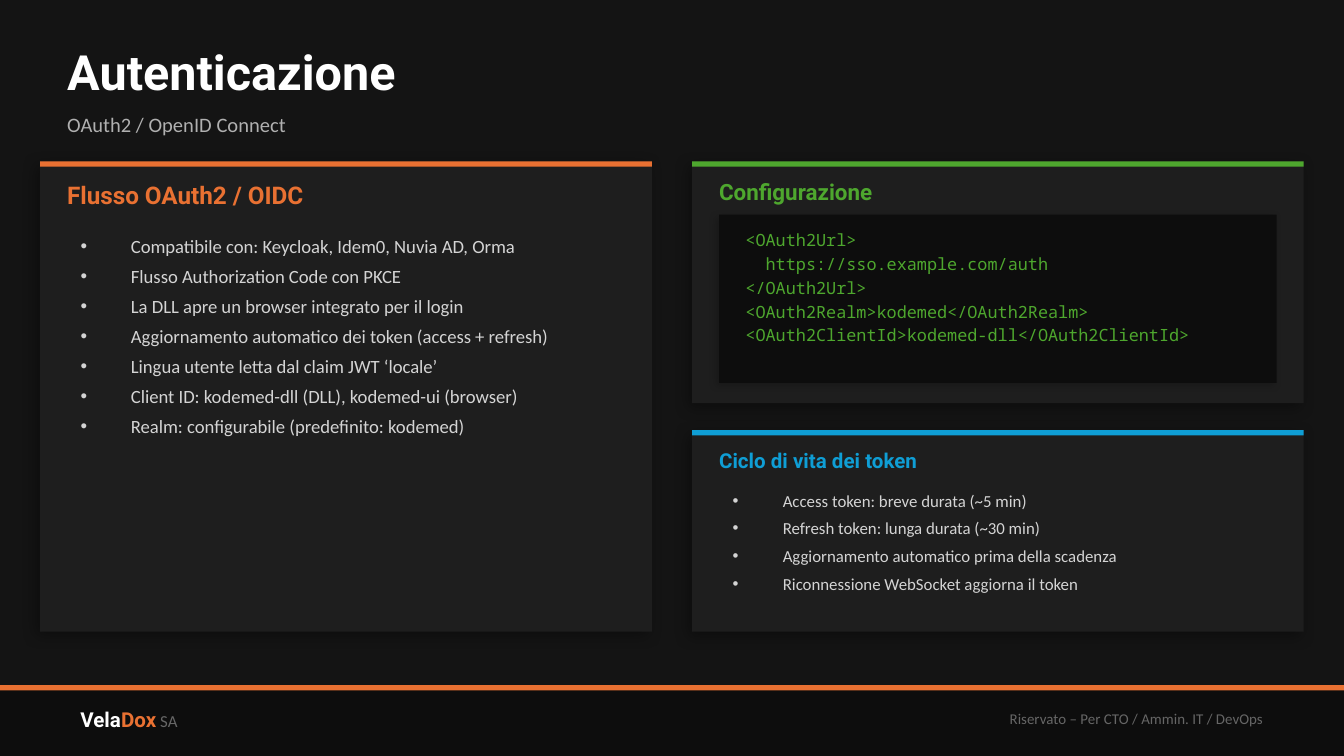
from lxml.etree import SubElement
from pptx import Presentation
from pptx.dml.color import RGBColor
from pptx.enum.shapes import MSO_SHAPE
from pptx.enum.text import MSO_ANCHOR, MSO_AUTO_SIZE, PP_ALIGN
from pptx.oxml.ns import qn
from pptx.util import Cm, Pt

BACKGROUND = RGBColor(0x14, 0x14, 0x14)
DARK = RGBColor(0x0D, 0x0D, 0x0D)
PANEL = RGBColor(0x1E, 0x1E, 0x1E)
ORANGE = RGBColor(0xE9, 0x71, 0x32)
GREEN = RGBColor(0x4E, 0xA7, 0x2E)
BLUE = RGBColor(0x0F, 0x9E, 0xD5)
WHITE = RGBColor(0xFF, 0xFF, 0xFF)
LIGHT = RGBColor(0xD4, 0xD4, 0xD4)
SILVER = RGBColor(0xB0, 0xB0, 0xB0)
GREY = RGBColor(0x66, 0x66, 0x66)
HEADING, BODY, MONO = "Roboto", "Calibri", "Noto Sans Mono"

TITLE = "Autenticazione"
SUBTITLE = "OAuth2 / OpenID Connect"
BRAND = [("Vela", HEADING, 11, WHITE, True), ("Dox", HEADING, 11, ORANGE, True),
         (" SA", BODY, 9, GREY, False)]
AUDIENCE = "Riservato – Per CTO / Ammin. IT / DevOps"
FLOW = [
    "Compatibile con: Keycloak, Idem0, Nuvia AD, Orma",
    "Flusso Authorization Code con PKCE",
    "La DLL apre un browser integrato per il login",
    "Aggiornamento automatico dei token (access + refresh)",
    "Lingua utente letta dal claim JWT ‘locale’",
    "Client ID: kodemed-dll (DLL), kodemed-ui (browser)",
    "Realm: configurabile (predefinito: kodemed)",
]
CONFIGURATION = [
    "<OAuth2Url>",
    "  https://sso.example.com/auth",
    "</OAuth2Url>",
    "<OAuth2Realm>kodemed</OAuth2Realm>",
    "<OAuth2ClientId>kodemed-dll</OAuth2ClientId>",
]
TOKENS = [
    "Access token: breve durata (~5 min)",
    "Refresh token: lunga durata (~30 min)",
    "Aggiornamento automatico prima della scadenza",
    "Riconnessione WebSocket aggiorna il token",
]

# All lengths below are centimetres.
SLIDE_WIDTH, SLIDE_HEIGHT = 25.4, 14.29
MARGIN, CARD_WIDTH, PADDING, BAR = 0.76, 11.56, 0.51, 0.1
LEFT, RIGHT = MARGIN, SLIDE_WIDTH - MARGIN - CARD_WIDTH
INNER_WIDTH = CARD_WIDTH - 2 * PADDING
CARD_TOP, CARD_BOTTOM, TOKENS_TOP = 3.05, 11.94, 8.13
CODE_TOP, CODE_HEIGHT = 4.06, 3.18
FOOTER_TOP = 12.95

# heading, colour, left, top, height, heading height, heading size
CARDS = [
    ("Flusso OAuth2 / OIDC", ORANGE, LEFT, CARD_TOP, CARD_BOTTOM - CARD_TOP, 0.76, 13),
    ("Configurazione", GREEN, RIGHT, CARD_TOP, 4.57, 0.64, 12),
    ("Ciclo di vita dei token", BLUE, RIGHT, TOKENS_TOP, CARD_BOTTOM - TOKENS_TOP, 0.64, 11),
]
# placeholder index, items, left, top, height, size
LISTS = [
    (1, FLOW, LEFT, 4.32, 7.11, 10),
    (2, TOKENS, RIGHT, 9.14, 2.54, 9),
]


def add_span(para, text, font, size, color, bold=False):
    span = para.add_run()
    span.text = text
    span.font.name, span.font.size, span.font.bold = font, Pt(size), bold
    span.font.color.rgb = color


def add_block(left, top, width, height, color, shadow=None):
    """Add a plain rectangle; shadow is (opacity %, blur pt, distance pt)."""
    block = slide.shapes.add_shape(
        MSO_SHAPE.RECTANGLE, Cm(left), Cm(top), Cm(width), Cm(height))
    block.fill.solid()
    block.fill.fore_color.rgb = color
    block.line.fill.background()
    block.shadow.inherit = False
    if shadow:
        opacity, blur, distance = shadow
        effects = block.element.spPr.find(qn("a:effectLst"))
        outer = SubElement(effects, qn("a:outerShdw"), blurRad=str(Pt(blur)),
                           dist=str(Pt(distance)), dir=str(135 * 60000),
                           algn="bl", rotWithShape="0")
        tint = SubElement(outer, qn("a:srgbClr"), val="000000")
        SubElement(tint, qn("a:alpha"), val=str(opacity * 1000))


def set_frame(box, left, top, width, height, anchor, inset=True):
    box.left, box.top, box.width, box.height = Cm(left), Cm(top), Cm(width), Cm(height)
    frame = box.text_frame
    frame.word_wrap = True
    frame.auto_size = MSO_AUTO_SIZE.NONE
    frame.vertical_anchor = anchor
    if not inset:
        frame.margin_left = frame.margin_right = 0
        frame.margin_top = frame.margin_bottom = 0
    return frame


def add_text(left, top, width, height, anchor=MSO_ANCHOR.MIDDLE, inset=False):
    box = slide.shapes.add_textbox(0, 0, 0, 0)
    return set_frame(box, left, top, width, height, anchor, inset)


def add_lines(frame, lines, font, size, color, gap, bullets=False):
    for index, line in enumerate(lines):
        para = frame.paragraphs[0] if index == 0 else frame.add_paragraph()
        if bullets:
            properties = para._p.get_or_add_pPr()
            properties.set("marL", str(Cm(0.95)))
            properties.set("indent", str(-Cm(0.95)))
            SubElement(properties, qn("a:buChar"), char="•")
        para.space_before, para.space_after = Pt(0), Pt(gap)
        add_span(para, line, font, size, color)


def bring_to_front(shape):
    shape.element.getparent().append(shape.element)


deck = Presentation()
deck.slide_width, deck.slide_height = Cm(SLIDE_WIDTH), Cm(SLIDE_HEIGHT)
slide = deck.slides.add_slide(deck.slide_layouts.get_by_name("Two Content"))
slide.background.fill.solid()
slide.background.fill.fore_color.rgb = BACKGROUND

# Footer
add_block(0, FOOTER_TOP, SLIDE_WIDTH, SLIDE_HEIGHT - FOOTER_TOP, DARK)
add_block(0, FOOTER_TOP, SLIDE_WIDTH, BAR, ORANGE)
brand = add_text(1.27, 13.08, 7.62, 1.02, inset=True).paragraphs[0]
for part in BRAND:
    add_span(brand, *part)
audience = add_text(13.97, 13.08, 10.16, 1.02, inset=True).paragraphs[0]
audience.alignment = PP_ALIGN.RIGHT
add_span(audience, AUDIENCE, BODY, 8, GREY)

# Header
title = slide.shapes.title
heading = set_frame(title, 1.27, 0.64, 22.86, 1.4, MSO_ANCHOR.MIDDLE, inset=False)
heading.paragraphs[0].alignment = PP_ALIGN.LEFT
add_span(heading.paragraphs[0], TITLE, HEADING, 26, WHITE, True)
bring_to_front(title)
subtitle = add_text(1.27, 1.91, 22.86, 0.89)
add_span(subtitle.paragraphs[0], SUBTITLE, BODY, 11, SILVER)

# Cards
for text, color, left, top, height, heading_height, size in CARDS:
    add_block(left, top, CARD_WIDTH, height, PANEL, shadow=(35, 8, 3))
    add_block(left, top, CARD_WIDTH, BAR, color)
    label = add_text(left + PADDING, top + 0.25, INNER_WIDTH, heading_height)
    add_span(label.paragraphs[0], text, HEADING, size, color, True)

for index, items, left, top, height, size in LISTS:
    body = slide.placeholders[index]
    frame = set_frame(body, left + PADDING, top, INNER_WIDTH, height, MSO_ANCHOR.TOP)
    add_lines(frame, items, BODY, size, LIGHT, gap=4, bullets=True)
    bring_to_front(body)

# Code
add_block(RIGHT + PADDING, CODE_TOP, INNER_WIDTH, CODE_HEIGHT, DARK, shadow=(20, 4, 2))
code = add_text(RIGHT + PADDING + 0.25, CODE_TOP + 0.15, INNER_WIDTH - 0.5,
                CODE_HEIGHT - 0.3, MSO_ANCHOR.TOP, inset=True)
add_lines(code, CONFIGURATION, MONO, 9, GREEN, gap=2)

deck.save("out.pptx")
